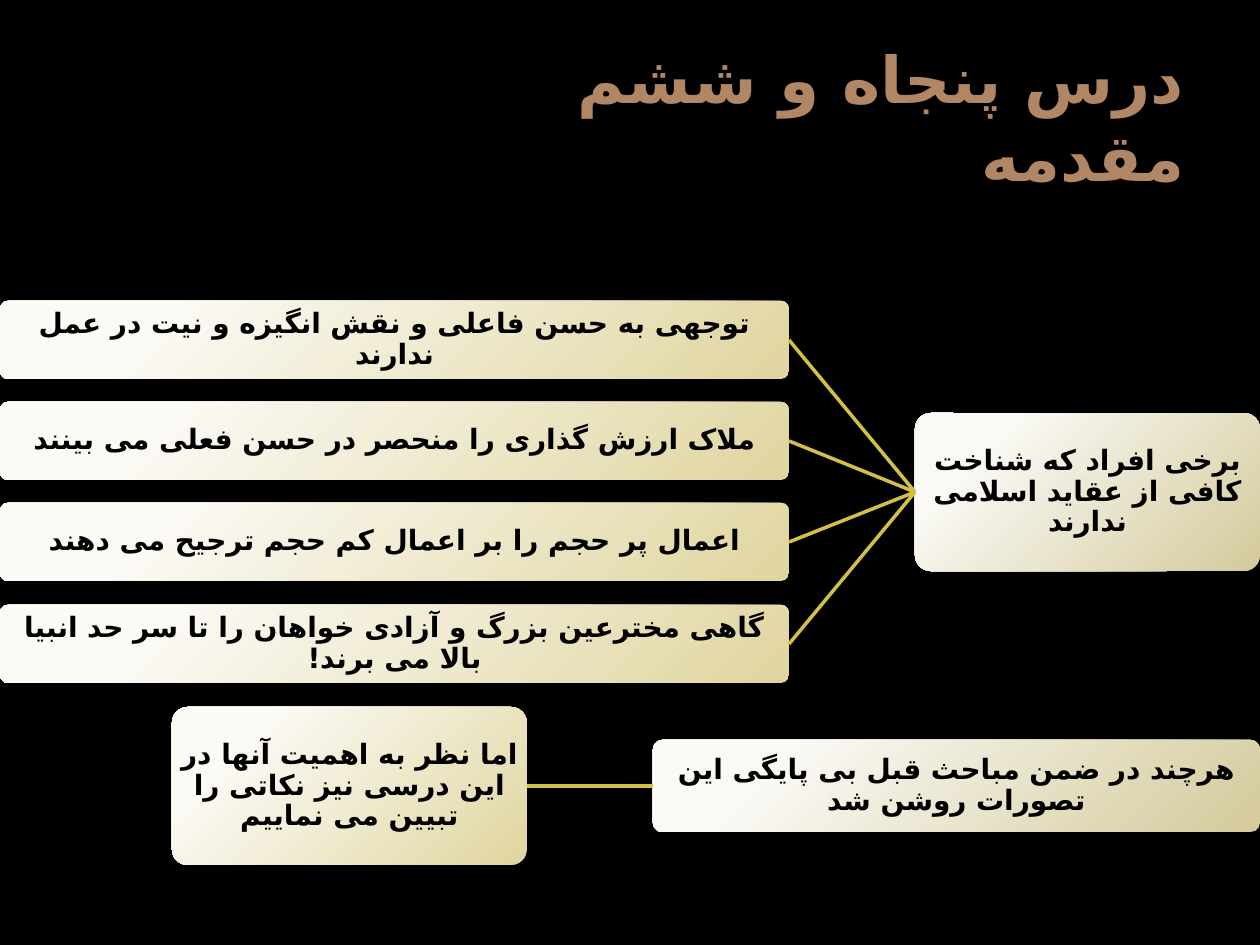
from lxml.etree import SubElement
from pptx import Presentation
from pptx.dml.color import RGBColor
from pptx.enum.shapes import MSO_CONNECTOR, MSO_SHAPE
from pptx.enum.text import MSO_ANCHOR, MSO_AUTO_SIZE, PP_ALIGN
from pptx.oxml.ns import qn
from pptx.util import Emu, Pt

BLACK = RGBColor(0x00, 0x00, 0x00)
BROWN = RGBColor(0xB0, 0x86, 0x64)
GOLD = RGBColor(0xD1, 0xBF, 0x46)
PALE_STONE = RGBColor(0xFA, 0xF9, 0xF5)
STONE = RGBColor(0xD4, 0xCA, 0x9C)
PALE_SAND = RGBColor(0xFB, 0xFA, 0xF5)
SAND = RGBColor(0xE0, 0xD5, 0x9F)

PARENT = (PALE_STONE, STONE)
CHILD = (PALE_SAND, SAND)
PERSIAN_FONT = "DejaVu Sans"

BRANCHES = [
    "توجهی به حسن فاعلی و نقش انگیزه و نیت در عمل ندارند",
    "ملاک ارزش گذاری را منحصر در حسن فعلی می بینند",
    "اعمال پر حجم را بر اعمال کم حجم ترجیح می دهند",
    "گاهی مخترعین بزرگ و آزادی خواهان را تا سر حد انبیا بالا می برند!",
]


def px(value):
    return Emu(round(value * 914400 / 126))


class Slide:
    """Right-to-left tree slide with a black background."""

    def __init__(self, deck):
        self.page = deck.slides.add_slide(deck.slide_layouts[5])
        background = self.page.background.fill
        background.solid()
        background.fore_color.rgb = BLACK

    def style_text(self, frame, align, font, size, color):
        frame.word_wrap = True
        frame.auto_size = MSO_AUTO_SIZE.NONE
        frame.vertical_anchor = MSO_ANCHOR.MIDDLE
        for para in frame.paragraphs:
            para.alignment = align
            para._p.get_or_add_pPr().set("rtl", "1")
            for span in para.runs:
                span.font.name = font
                span.font.size = Pt(size)
                span.font.bold = True
                span.font.color.rgb = color
                SubElement(span.font._element, qn("a:cs"), typeface=PERSIAN_FONT)

    def title(self, text, left, top, width, height):
        title = self.page.shapes.title
        title.left, title.top = px(left), px(top)
        title.width, title.height = px(width), px(height)
        title.text_frame.text = text
        self.style_text(title.text_frame, PP_ALIGN.RIGHT, "Noto Sans", 36.9, BROWN)

    def node(self, text, colors, left, top, width, height):
        box = self.page.shapes.add_shape(
            MSO_SHAPE.ROUNDED_RECTANGLE, px(left), px(top), px(width), px(height))
        box.adjustments[0] = 0.1
        box.shadow.inherit = False
        box.line.fill.background()
        self.radial_fill(box, colors)
        frame = box.text_frame
        frame.margin_left = frame.margin_right = px(1)
        frame.margin_top = frame.margin_bottom = px(1)
        frame.text = text
        self.style_text(frame, PP_ALIGN.CENTER, "Vollkorn", 16, BLACK)
        frame.paragraphs[0].line_spacing = 0.9
        return box

    def radial_fill(self, box, colors):
        box.fill.gradient()
        for stop, color, position in zip(box.fill.gradient_stops, colors, (0.2, 1)):
            stop.color.rgb = color
            stop.position = position
        gradient = box._element.spPr.find(qn("a:gradFill"))
        gradient.remove(gradient.find(qn("a:lin")))
        path = SubElement(gradient, qn("a:path"), path="circle")
        SubElement(path, qn("a:fillToRect"),
                   l="-15000", t="-15000", r="115000", b="115000")

    def link(self, parent, child):
        line = self.page.shapes.add_connector(
            MSO_CONNECTOR.STRAIGHT,
            parent.left, parent.top + parent.height // 2,
            child.left + child.width, child.top + child.height // 2)
        line.line.color.rgb = GOLD
        line.line.width = Pt(2)
        SubElement(line._element.spPr, qn("a:effectLst"))


def main():
    deck = Presentation()
    deck.slide_width, deck.slide_height = px(1260), px(945)
    slide = Slide(deck)
    slide.title("درس پنجاه و ششم\vمقدمه", 63, 38, 1134, 157)

    people = slide.node("برخی افراد که شناخت کافی از عقاید اسلامی ندارند",
                        PARENT, 915, 413, 345, 158)
    for index, text in enumerate(BRANCHES):
        branch = slide.node(text, CHILD, 0, 301 + index * 304 // 3, 789, 78)
        slide.link(people, branch)

    earlier = slide.node("هرچند در ضمن مباحث قبل بی پایگی این تصورات روشن شد",
                         PARENT, 653, 740, 607, 92)
    lesson = slide.node("اما نظر به اهمیت آنها در این درسی نیز نکاتی را تبیین می نماییم",
                        CHILD, 172, 707, 355, 158)
    slide.link(earlier, lesson)
    deck.save("out.pptx")


if __name__ == "__main__":
    main()
